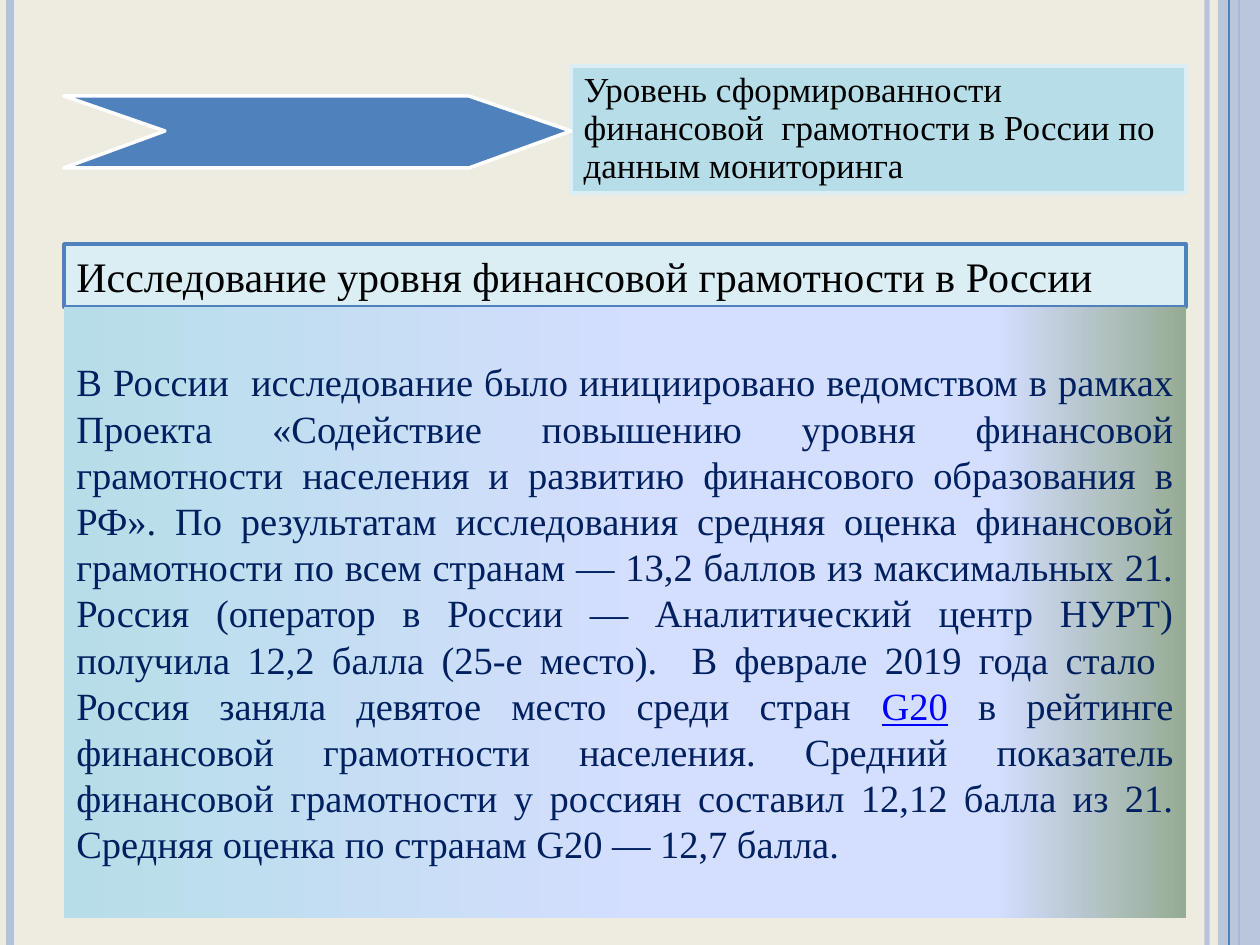
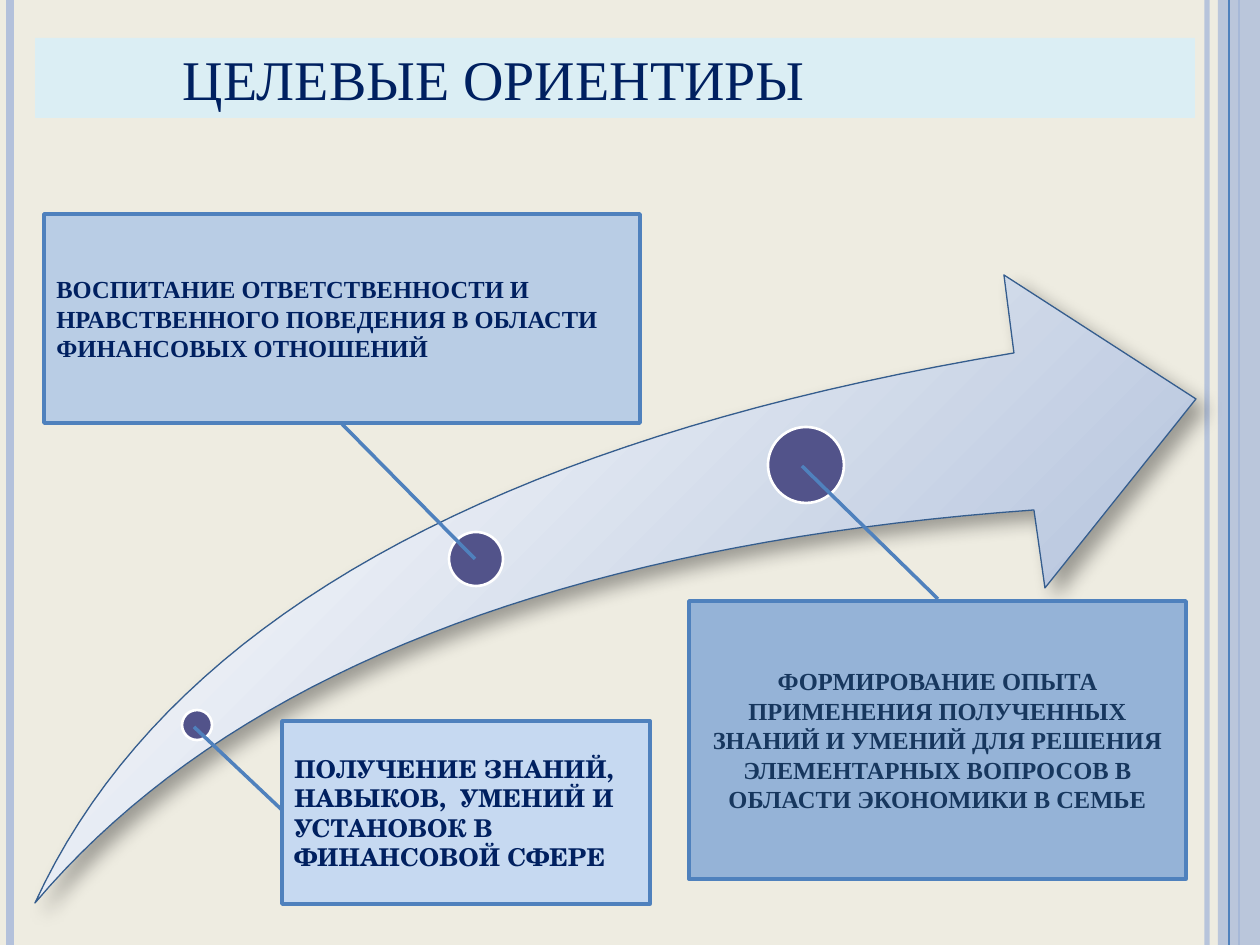
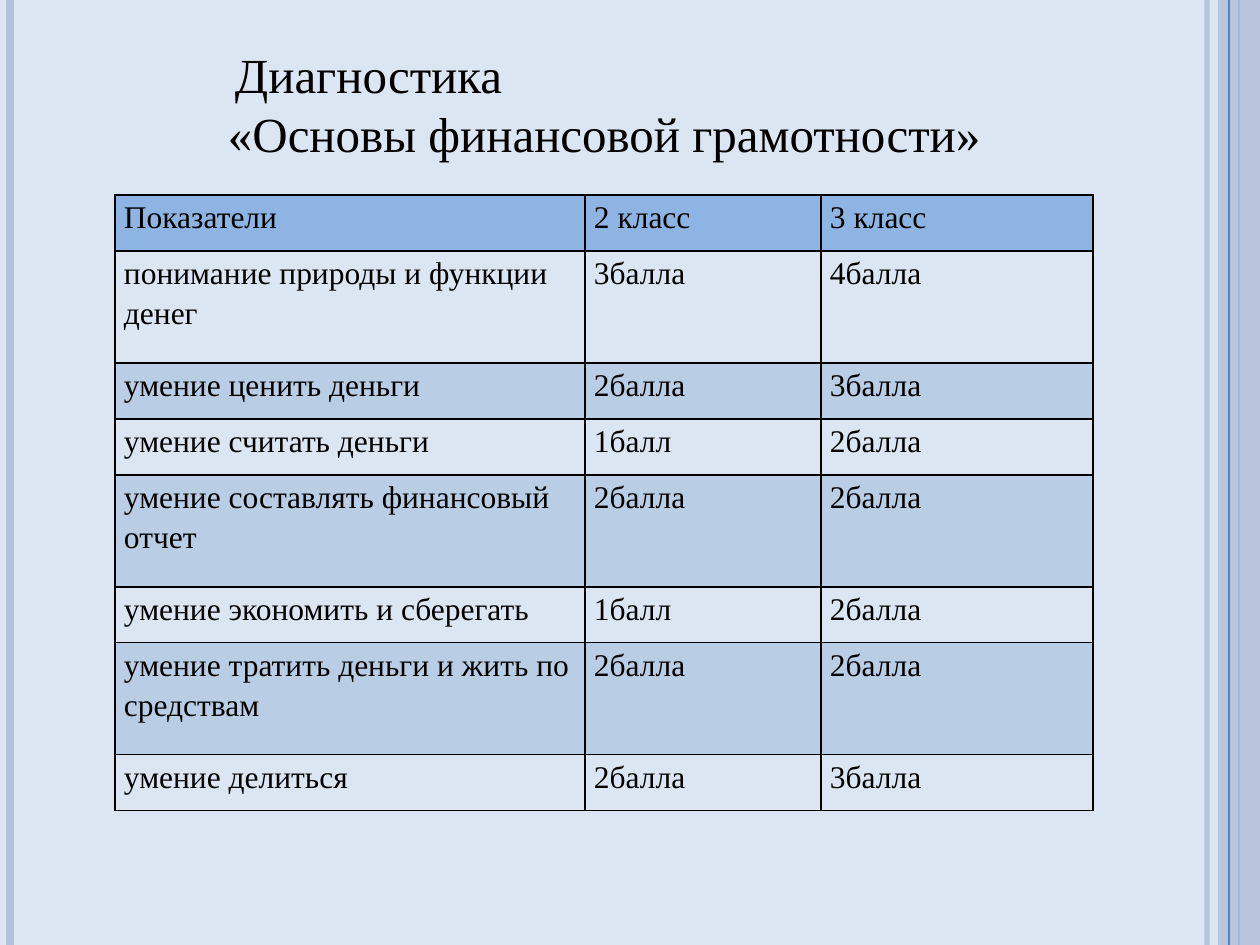
from dataclasses import dataclass
from typing import NamedTuple, Sequence

from lxml.etree import SubElement
from pptx import Presentation
from pptx.dml.color import RGBColor
from pptx.enum.shapes import MSO_CONNECTOR as Connector, MSO_SHAPE as Preset
from pptx.enum.text import MSO_ANCHOR as Anchor, MSO_AUTO_SIZE as AutoSize, PP_ALIGN as Align
from pptx.oxml.ns import qn
from pptx.util import Emu, Pt

# Shared measures, colours and fonts
PX_PER_INCH = 126
WIDTH, HEIGHT = 1260, 945
SERIF, SCHOOL = "Times New Roman", "TeX Gyre Schola"
BLACK, WHITE, NAVY, BLUE = "000000", "FFFFFF", "002060", "4F81BD"
PALE, AQUA, STEEL, BAND = "DBEEF4", "B7DEE8", "B9CDE5", "B3C1DB"
CREAM, ICE = "EEECE1", "DCE6F2"


class Box(NamedTuple):
    left: int
    top: int
    width: int
    height: int


class Point(NamedTuple):
    x: float
    y: float


class Stop(NamedTuple):
    percent: int
    color: str


@dataclass
class Run:
    text: str
    size: int
    color: str = BLACK
    font: str = SERIF
    bold: bool = False
    underline: bool = False


@dataclass
class Rule:
    x: int
    color: str
    weight: float
    opacity: int = 100


@dataclass
class Ball:
    center: Point
    diameter: int


@dataclass
class Callout:
    box: Box
    line_start: Point
    line_end: Point
    fill: str
    run: Run
    align: Align = Align.LEFT


# Helpers
def px(length: float) -> Emu:
    return Emu(round(length * 914400 / PX_PER_INCH))


def rgb(color: str) -> RGBColor:
    return RGBColor.from_string(color)


def add_xml(parent, tag: str, **attributes):
    return SubElement(parent, qn(tag), {key: str(value) for key, value in attributes.items()})


def set_opacity(shape, percent: int) -> None:
    if percent < 100:
        add_xml(shape.element.find(".//" + qn("a:srgbClr")), "a:alpha", val=percent * 1000)


def paint(shape, fill: str | None = None, line: str | None = None, weight: float = 2) -> None:
    if fill:
        shape.fill.solid()
        shape.fill.fore_color.rgb = rgb(fill)
    if line:
        shape.line.color.rgb = rgb(line)
        shape.line.width = Pt(weight)
    else:
        shape.line.fill.background()


def paint_gradient(shape, stops: Sequence[Stop], radial: bool = False) -> None:
    shape.fill.gradient()
    gradient = shape.element.spPr.find(qn("a:gradFill"))
    for child in list(gradient):
        gradient.remove(child)
    stop_list = add_xml(gradient, "a:gsLst")
    for stop in stops:
        entry = add_xml(stop_list, "a:gs", pos=stop.percent * 1000)
        add_xml(entry, "a:srgbClr", val=stop.color)
    if radial:
        circle = add_xml(gradient, "a:path", path="circle")
        add_xml(circle, "a:fillToRect", l=-15000, t=-15000, r=115000, b=115000)
    else:
        add_xml(gradient, "a:lin", ang=0, scaled=0)


def add_preset(slide, preset: Preset, box: Box):
    shape = slide.shapes.add_shape(preset, *map(px, box))
    shape.shadow.inherit = False
    return shape


def add_outline(slide, points: Sequence[Point]):
    start, *rest = [(px(x), px(y)) for x, y in points]
    builder = slide.shapes.build_freeform(*start)
    builder.add_line_segments(rest, close=True)
    shape = builder.convert_to_shape()
    shape.shadow.inherit = False
    return shape


def bezier(a: Point, b: Point, c: Point, d: Point, steps: int = 40) -> list[Point]:
    def blend(t: float, values: Sequence[float]) -> float:
        weights = ((1 - t) ** 3, 3 * t * (1 - t) ** 2, 3 * t * t * (1 - t), t ** 3)
        return sum(weight * value for weight, value in zip(weights, values))

    corners = (a, b, c, d)
    return [Point(blend(i / steps, [p.x for p in corners]), blend(i / steps, [p.y for p in corners]))
            for i in range(steps + 1)]


def write_runs(paragraph, runs: Sequence[Run], align: Align = Align.LEFT) -> None:
    paragraph.alignment = align
    for item in runs:
        run = paragraph.add_run()
        run.text = item.text
        font = run.font
        font.name, font.size, font.bold = item.font, Pt(item.size), item.bold
        font.underline = item.underline
        font.color.rgb = rgb(item.color)


def write(shape, runs: Sequence[Run], align: Align = Align.LEFT, anchor: Anchor = Anchor.TOP):
    frame = shape.text_frame
    frame.word_wrap = True
    frame.auto_size = AutoSize.NONE
    frame.vertical_anchor = anchor
    write_runs(frame.paragraphs[0], runs, align)
    return frame


def place_title(slide, box: Box, run: Run):
    title = slide.shapes.title
    title.left, title.top, title.width, title.height = map(px, box)
    return title, write(title, [run])


def add_slide(presentation, background: str):
    slide = presentation.slides.add_slide(presentation.slide_layouts[5])
    slide.background.fill.solid()
    slide.background.fill.fore_color.rgb = rgb(background)
    return slide


# Side bands, kept on the slide master
RULES_BELOW = [Rule(1207, BAND, 3, 93), Rule(10, BAND, 4.5), Rule(1239, BLUE, 1.5)]
RULE_ABOVE = Rule(1229, BLUE, 0.75)


def add_rule(slide, rule: Rule):
    line = slide.shapes.add_connector(Connector.STRAIGHT, px(rule.x), 0, px(rule.x), px(HEIGHT))
    line.line.color.rgb = rgb(rule.color)
    line.line.width = Pt(rule.weight)
    add_xml(line.element.spPr, "a:effectLst")
    set_opacity(line, rule.opacity)
    return line


def add_side_bands(presentation, slide) -> None:
    parts = [add_rule(slide, rule) for rule in RULES_BELOW]
    band = add_preset(slide, Preset.RECTANGLE, Box(1218, 0, 42, HEIGHT))
    paint(band, BAND)
    set_opacity(band, 87)
    parts += [band, add_rule(slide, RULE_ABOVE)]
    master_tree = presentation.slide_master.shapes.element
    for number, part in enumerate(parts, start=101):
        part.element.find(".//" + qn("p:cNvPr")).set("id", str(number))
        master_tree.append(part.element)


# Slide 1: literacy level
STUDY_BEFORE = (
    "В России  исследование было инициировано ведомством в рамках Проекта «Содействие повышению "
    "уровня финансовой грамотности населения и развитию финансового образования в РФ». "
    "По результатам исследования средняя оценка финансовой грамотности по всем странам — "
    "13,2 баллов из максимальных 21. Россия (оператор в России — Аналитический центр НУРТ) "
    "получила 12,2 балла (25-е место).  В феврале 2019 года стало  Россия заняла девятое место "
    "среди стран ")
STUDY_AFTER = (
    " в рейтинге финансовой грамотности населения. Средний показатель финансовой грамотности "
    "у россиян составил 12,12 балла из 21. Средняя оценка по странам G20 — 12,7 балла.")


def fill_level_slide(slide) -> None:
    title, frame = place_title(slide, Box(571, 66, 615, 127), Run(
        "Уровень сформированности финансовой  грамотности в России по данным мониторинга", 20))
    paint(title, AQUA, PALE)
    frame.paragraphs[0].line_spacing = 0.9

    pointer = add_outline(slide, [Point(64, 96), Point(469, 96), Point(571, 131),
                                  Point(469, 168), Point(64, 168), Point(165, 131)])
    paint(pointer, BLUE, WHITE)

    heading = add_preset(slide, Preset.RECTANGLE, Box(64, 244, 1122, 63))
    paint(heading, PALE, BLUE)
    write(heading, [Run("Исследование уровня финансовой грамотности в России", 24)])

    study = add_preset(slide, Preset.RECTANGLE, Box(64, 307, 1122, 611))
    paint(study)
    paint_gradient(study, [Stop(0, AQUA), Stop(53, "D4DEFF"), Stop(83, "D4DEFF"),
                           Stop(100, "96AB94")])
    write(study, [Run(STUDY_BEFORE, 22, NAVY), Run("G20", 22, "0000FF", underline=True),
                  Run(STUDY_AFTER, 22, NAVY)], Align.JUSTIFY, Anchor.MIDDLE)


# Slide 2: targets along a rising arrow
ARROW = [
    *bezier(Point(35, 903), Point(163, 624), Point(490, 440), Point(1014, 353)),
    Point(1004, 275), Point(1196, 399), Point(1045, 588),
    *bezier(Point(1034, 510), Point(562, 544), Point(228, 675), Point(35, 903)),
]
BALLS = [Ball(Point(197, 725), 30), Ball(Point(476, 559), 54), Ball(Point(806, 465), 76)]
CALLOUTS = [
    Callout(Box(282, 721, 368, 183), Point(282, 810), Point(194, 727), "C6D9F1",
            Run("ПОЛУЧЕНИЕ ЗНАНИЙ, НАВЫКОВ,  УМЕНИЙ И УСТАНОВОК В ФИНАНСОВОЙ СФЕРЕ",
                14, NAVY, SCHOOL, bold=True)),
    Callout(Box(44, 214, 596, 209), Point(342, 424), Point(475, 559), STEEL,
            Run("ВОСПИТАНИЕ ОТВЕТСТВЕННОСТИ И НРАВСТВЕННОГО ПОВЕДЕНИЯ В ОБЛАСТИ "
                "ФИНАНСОВЫХ ОТНОШЕНИЙ", 14, NAVY, bold=True)),
    Callout(Box(689, 601, 497, 278), Point(802, 466), Point(938, 599), "95B3D7",
            Run("ФОРМИРОВАНИЕ ОПЫТА ПРИМЕНЕНИЯ ПОЛУЧЕННЫХ ЗНАНИЙ И УМЕНИЙ ДЛЯ РЕШЕНИЯ "
                "ЭЛЕМЕНТАРНЫХ ВОПРОСОВ В ОБЛАСТИ ЭКОНОМИКИ В СЕМЬЕ",
                14, "17375E", bold=True), Align.CENTER),
]


def add_arrow(slide) -> None:
    arrow = add_outline(slide, ARROW)
    paint(arrow, line="355D8D", weight=0.75)
    paint_gradient(arrow, [Stop(20, "F5F7FA"), Stop(100, "A1B4D4")], radial=True)
    effects = arrow.element.spPr.find(qn("a:effectLst"))
    shadow = add_xml(effects, "a:outerShdw", blurRad=Pt(10.2), dist=Pt(8), dir=45 * 60000,
                     algn="tl", rotWithShape=0)
    add_xml(add_xml(shadow, "a:srgbClr", val=BLACK), "a:alpha", val=35000)


def add_ball(slide, ball: Ball) -> None:
    radius = ball.diameter // 2
    shape = add_preset(slide, Preset.OVAL, Box(ball.center.x - radius, ball.center.y - radius,
                                               ball.diameter, ball.diameter))
    paint(shape, "52538A", WHITE, 1.5)


def add_callout(slide, callout: Callout) -> None:
    box = callout.box
    shape = add_preset(slide, Preset.LINE_CALLOUT_1, box)
    ends = [((point.y - box.top) / box.height, (point.x - box.left) / box.width)
            for point in (callout.line_start, callout.line_end)]
    for index, value in enumerate(ends[0] + ends[1]):
        shape.adjustments[index] = value
    paint(shape, callout.fill, BLUE)
    write(shape, [callout.run], callout.align, Anchor.MIDDLE)


def fill_targets_slide(slide) -> None:
    title, frame = place_title(slide, Box(35, 38, 1160, 80), Run("ЦЕЛЕВЫЕ ОРИЕНТИРЫ", 32, NAVY))
    paint(title, PALE)
    frame.margin_left = px(148)
    add_arrow(slide)
    for ball in BALLS:
        add_ball(slide, ball)
    for callout in CALLOUTS:
        add_callout(slide, callout)


# Slide 3: diagnostics table
SCORES = [
    ("Показатели", "2 класс", "3 класс"),
    ("понимание природы и функции денег", "3балла", "4балла"),
    ("умение ценить деньги", "2балла", "3балла"),
    ("умение считать деньги", "1балл", "2балла"),
    ("умение составлять финансовый отчет", "2балла", "2балла"),
    ("умение экономить и сберегать", "1балл", "2балла"),
    ("умение тратить деньги и жить по средствам", "2балла", "2балла"),
    ("умение делиться", "2балла", "3балла"),
]
COLUMN_WIDTHS = (470, 236, 272)
ROW_HEIGHT = 56
TALL_ROWS = (1, 4, 6)


def format_cell(cell, text: str, fill: str | None) -> None:
    cell.margin_left = cell.margin_right = px(9)
    cell.margin_top = cell.margin_bottom = 0
    paragraph = cell.text_frame.paragraphs[0]
    write_runs(paragraph, [Run(text, 18)])
    paragraph.line_spacing = 1.15
    properties = cell._tc.get_or_add_tcPr()
    for side in "LRTB":
        border = add_xml(properties, f"a:ln{side}", w=Pt(1))
        add_xml(add_xml(border, "a:solidFill"), "a:srgbClr", val=BLACK)
    if fill:
        cell.fill.solid()
        cell.fill.fore_color.rgb = rgb(fill)
    else:
        cell.fill.background()


def fill_scores_slide(slide) -> None:
    _, frame = place_title(slide, Box(115, 38, 978, 131), Run("Диагностика", 28))
    frame.margin_left = px(113)
    first = frame.paragraphs[0]
    first._p.get_or_add_pPr().set("indent", str(px(7)))
    write_runs(frame.add_paragraph(), [Run("«Основы финансовой грамотности»", 28)])

    heights = [ROW_HEIGHT * (2 if row in TALL_ROWS else 1) for row in range(len(SCORES))]
    box = Box(115, 195, sum(COLUMN_WIDTHS), sum(heights))
    table = slide.shapes.add_table(len(SCORES), len(COLUMN_WIDTHS), *map(px, box)).table
    table.first_row = table.horz_banding = False
    for column, width in zip(table.columns, COLUMN_WIDTHS):
        column.width = px(width)
    for index, (texts, height) in enumerate(zip(SCORES, heights)):
        table.rows[index].height = px(height)
        fill = "8EB4E3" if index == 0 else STEEL if index % 2 == 0 else None
        for column, text in enumerate(texts):
            format_cell(table.cell(index, column), text, fill)


def main() -> None:
    presentation = Presentation()
    presentation.slide_width, presentation.slide_height = px(WIDTH), px(HEIGHT)
    pages = [(CREAM, fill_level_slide), (CREAM, fill_targets_slide), (ICE, fill_scores_slide)]
    for number, (background, fill_slide) in enumerate(pages):
        slide = add_slide(presentation, background)
        if number == 0:
            add_side_bands(presentation, slide)
        fill_slide(slide)
    presentation.save("out.pptx")


if __name__ == "__main__":
    main()
